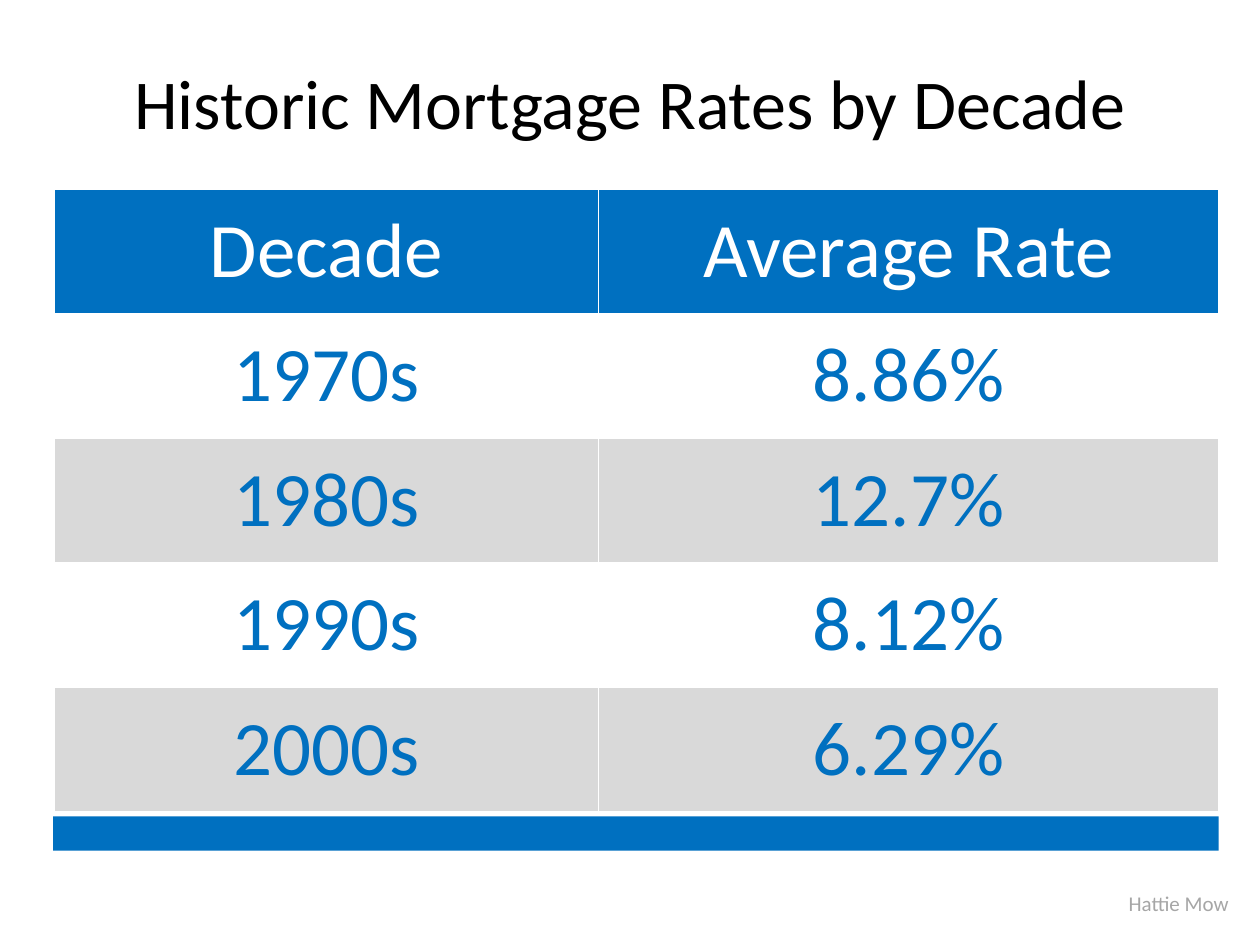
from dataclasses import dataclass

from pptx import Presentation
from pptx.dml.color import RGBColor
from pptx.enum.shapes import MSO_SHAPE as Shape
from pptx.enum.text import MSO_ANCHOR as Anchor, MSO_AUTO_SIZE as AutoSize, PP_ALIGN as Align
from pptx.util import Cm, Pt


@dataclass(frozen=True)
class Theme:
    font: str = "Calibri"
    blue: str = "0070C0"
    gray: str = "D9D9D9"
    white: str = "FFFFFF"
    black: str = "000000"
    muted: str = "A6A6A6"
    title_size: int = 40
    table_size: int = 44
    source_size: int = 12


THEME = Theme()
RATES = [
    ("Decade", "Average Rate"),
    ("1970s", "8.86%"),
    ("1980s", "12.7%"),
    ("1990s", "8.12%"),
    ("2000s", "6.29%"),
]


def paint(fill, color):
    fill.solid()
    fill.fore_color.rgb = RGBColor.from_string(color)


def write(tf, text, size, color, align):
    p = tf.paragraphs[0]
    p.text = text
    p.alignment = align
    p.font.name = THEME.font
    p.font.size = Pt(size)
    p.font.bold = False
    p.font.color.rgb = RGBColor.from_string(color)


def add_text(s, box, text, size, color, align, wrap=True):
    tf = s.shapes.add_textbox(*map(Cm, box)).text_frame
    tf.word_wrap = wrap
    tf.auto_size = AutoSize.SHAPE_TO_FIT_TEXT
    write(tf, text, size, color, align)


def add_rate_table(s, left, top, col_widths, row_height):
    height = row_height * len(RATES)
    table = s.shapes.add_table(len(RATES), len(col_widths), Cm(left), Cm(top),
                               Cm(sum(col_widths)), Cm(height)).table
    for column, width in zip(table.columns, col_widths):
        column.width = Cm(width)
    for i, values in enumerate(RATES):
        table.rows[i].height = Cm(row_height)
        # Blue header, then alternating white and gray rows
        fill = THEME.blue if i == 0 else (THEME.gray, THEME.white)[i % 2]
        color = THEME.white if i == 0 else THEME.blue
        for j, value in enumerate(values):
            cell = table.cell(i, j)
            paint(cell.fill, fill)
            cell.vertical_anchor = Anchor.MIDDLE
            write(cell.text_frame, value, THEME.table_size, color, Align.CENTER)


def add_bar(s, box, color):
    sp = s.shapes.add_shape(Shape.RECTANGLE, *map(Cm, box))
    sp.shadow.inherit = False
    paint(sp.fill, color)
    sp.line.fill.background()


def main():
    prs = Presentation()
    prs.slide_width, prs.slide_height = Cm(25.4), Cm(19.05)
    s = prs.slides.add_slide(prs.slide_layouts[6])

    # Rates
    add_rate_table(s, 1.1, 3.81, (10.97, 12.5), 2.51)

    # Source and title
    add_text(s, (22.35, 17.83, 2.67, 0.76), "Hattie Mow", THEME.source_size,
             THEME.muted, Align.RIGHT, wrap=False)
    add_text(s, (0, 1.07, 25.4, 1.96), "Historic Mortgage Rates by Decade",
             THEME.title_size, THEME.black, Align.CENTER)

    # Closing bar under the table
    add_bar(s, (1.07, 16.46, 23.5, 0.69), THEME.blue)

    prs.save("out.pptx")


if __name__ == "__main__":
    main()
